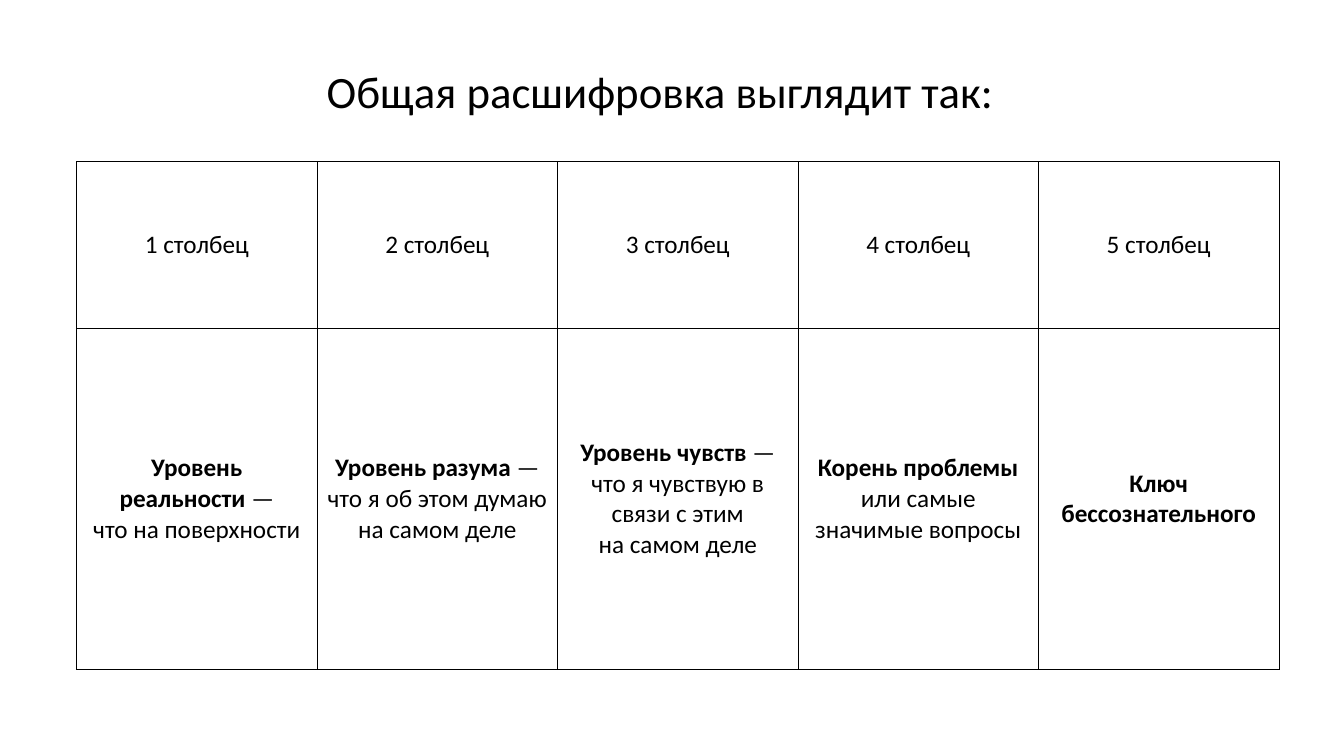
from lxml import etree
from pptx import Presentation
from pptx import util as u
from pptx.dml.color import RGBColor
from pptx.enum import text
from pptx.oxml.ns import qn

BLACK = RGBColor(0, 0, 0)
WHITE = RGBColor(255, 255, 255)

LEVELS = [
    ("Уровень реальности", " —\nчто на поверхности"),
    ("Уровень разума", " —\nчто я об этом думаю\nна самом деле"),
    ("Уровень чувств", " —\nчто я чувствую в\nсвязи с этим\nна самом деле"),
    ("Корень проблемы", "\nили самые\nзначимые вопросы"),
    ("Ключ\nбессознательного", ""),
]


class Page:
    font = "Calibri"
    title_size = u.Pt(32)
    cell_size = u.Pt(18)
    border = u.Pt(0.6)

    def __init__(self, slide):
        self.slide = slide

    def style(self, run, size, bold=False):
        run.font.name = self.font
        run.font.size = size
        run.font.bold = bold
        run.font.color.rgb = BLACK

    def title(self, wording, left, top, width, height):
        heading = self.slide.shapes.title
        heading.left, heading.top = u.Cm(left), u.Cm(top)
        heading.width, heading.height = u.Cm(width), u.Cm(height)
        frame = heading.text_frame
        frame.text = wording
        frame.word_wrap = True
        frame.auto_size = text.MSO_AUTO_SIZE.NONE
        frame.vertical_anchor = text.MSO_ANCHOR.MIDDLE
        frame.paragraphs[0].alignment = text.PP_ALIGN.LEFT
        self.style(frame.paragraphs[0].runs[0], self.title_size)

    def outline(self, cell):
        properties = cell._tc.get_or_add_tcPr()
        for side in ("a:lnL", "a:lnR", "a:lnT", "a:lnB"):
            edge = etree.SubElement(properties, qn(side), w=str(self.border))
            paint = etree.SubElement(edge, qn("a:solidFill"))
            etree.SubElement(paint, qn("a:srgbClr"), val=str(BLACK))

    def add_wording(self, paragraph, wording, bold):
        for number, line in enumerate(wording.split("\n")):
            if number:
                paragraph.add_line_break()
            if line:
                run = paragraph.add_run()
                run.text = line
                self.style(run, self.cell_size, bold)

    def table(self, rows, left, top, column_width, row_heights):
        columns = len(rows[0])
        grid = self.slide.shapes.add_table(
            len(rows), columns, u.Cm(left), u.Cm(top),
            u.Cm(column_width * columns), u.Cm(sum(row_heights))).table
        grid.first_row = grid.horz_banding = False
        for column in grid.columns:
            column.width = u.Cm(column_width)
        for r, (height, entries) in enumerate(zip(row_heights, rows)):
            grid.rows[r].height = u.Cm(height)
            for c, (strong, plain) in enumerate(entries):
                cell = grid.cell(r, c)
                self.outline(cell)
                cell.fill.solid()
                cell.fill.fore_color.rgb = WHITE
                cell.vertical_anchor = text.MSO_ANCHOR.MIDDLE
                paragraph = cell.text_frame.paragraphs[0]
                paragraph.alignment = text.PP_ALIGN.CENTER
                self.add_wording(paragraph, strong, True)
                self.add_wording(paragraph, plain, False)


def main():
    deck = Presentation()
    deck.slide_width, deck.slide_height = u.Cm(33.87), u.Cm(19.05)
    page = Page(deck.slides.add_slide(deck.slide_layouts[5]))
    headers = [("", f"{number} столбец") for number in range(1, len(LEVELS) + 1)]
    page.table([headers, LEVELS], 1.93, 4.07, 6.06, [4.2, 8.6])
    page.title("Общая расшифровка выглядит так:", 7.98, 1.35, 18.2, 1.85)
    deck.save("out.pptx")


if __name__ == "__main__":
    main()
